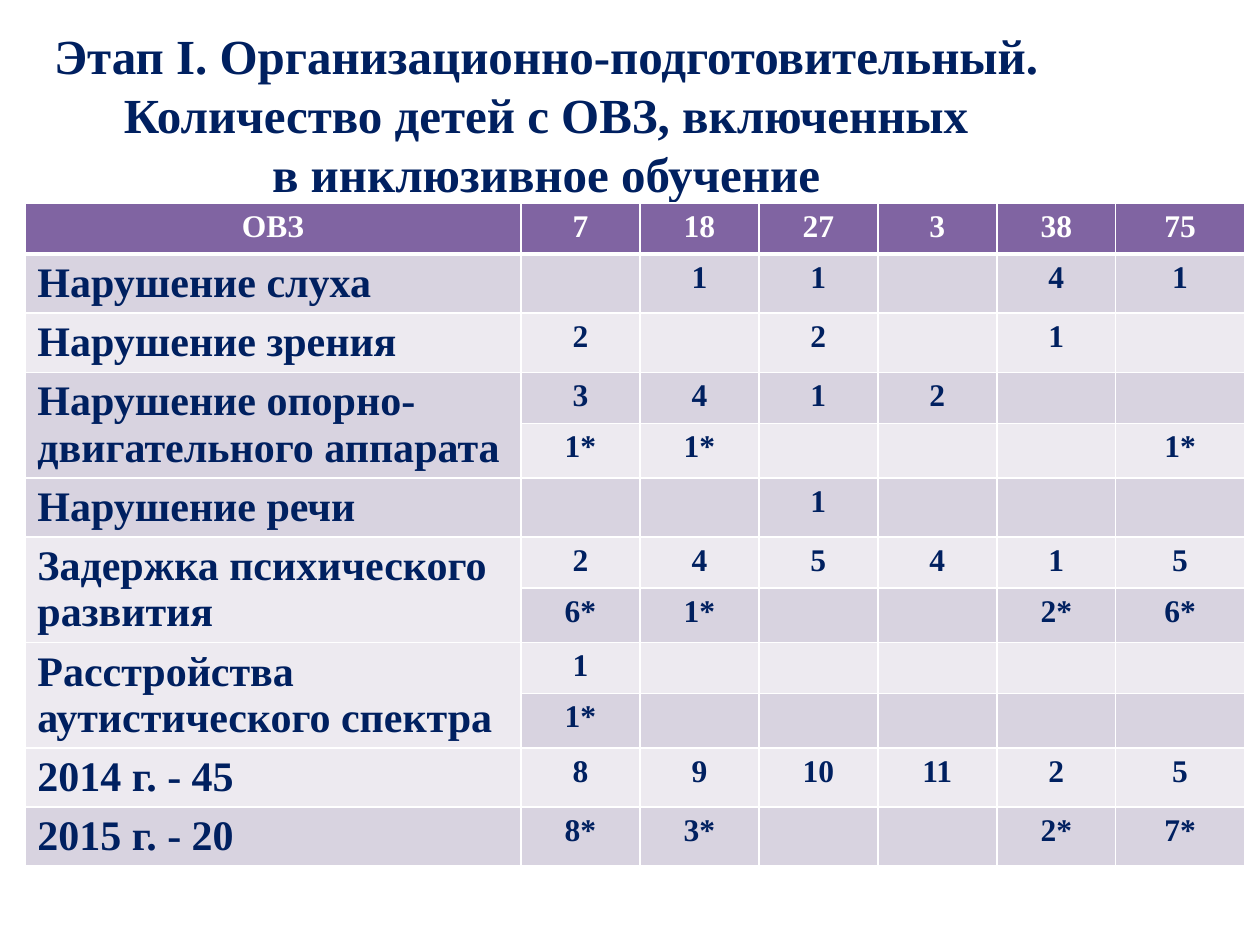
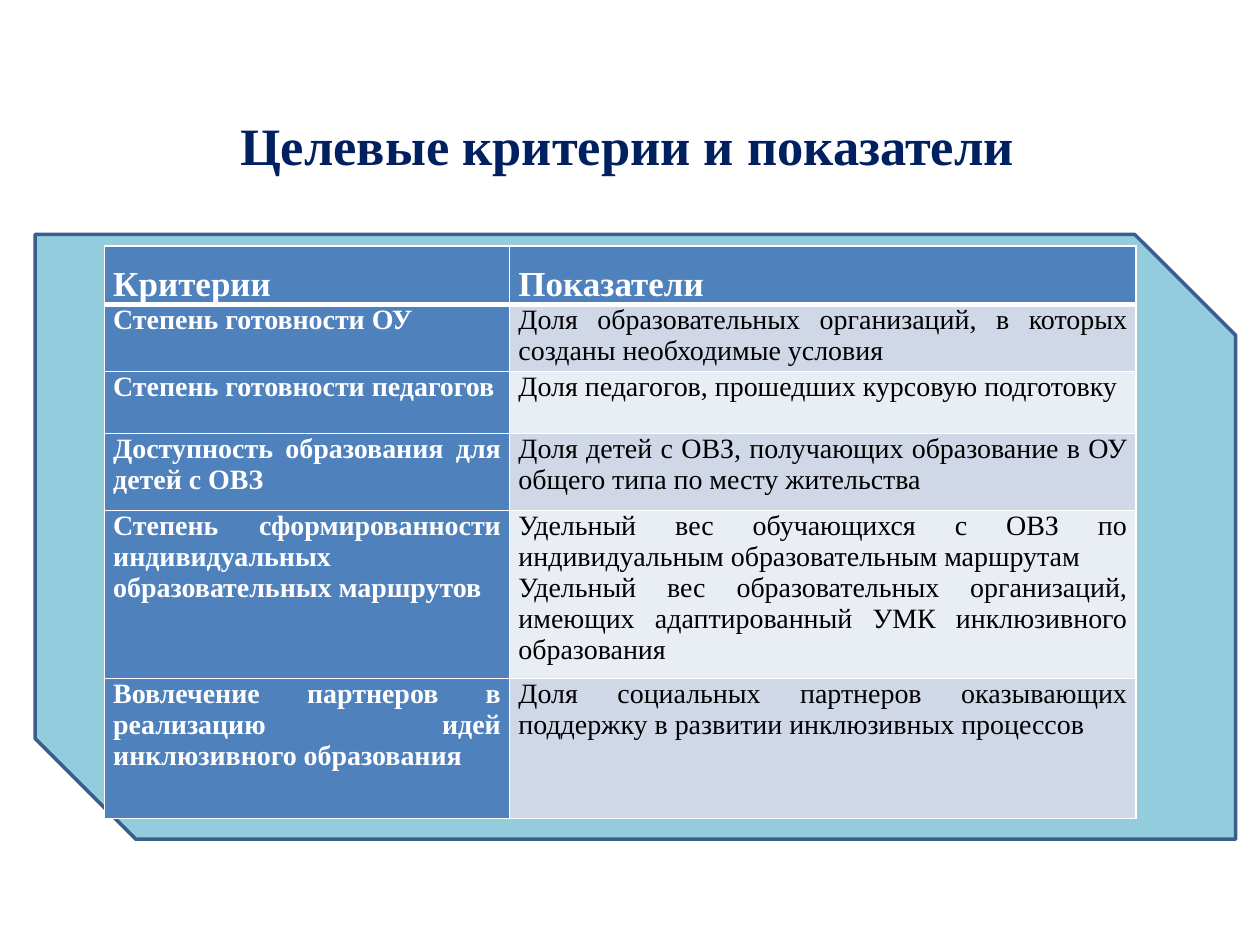
"""Build two slides on inclusive education: pupil counts, then target criteria."""
from dataclasses import dataclass

from lxml import etree
from pptx import Presentation
from pptx.dml.color import RGBColor
from pptx.enum.shapes import MSO_SHAPE
from pptx.enum.text import MSO_ANCHOR, MSO_AUTO_SIZE, PP_ALIGN
from pptx.oxml.ns import qn
from pptx.util import Pt

CENTER, JUSTIFY, LEFT = PP_ALIGN.CENTER, PP_ALIGN.JUSTIFY, PP_ALIGN.LEFT
MIDDLE = MSO_ANCHOR.MIDDLE
NO_AUTOFIT = MSO_AUTO_SIZE.NONE
SNIPPED = MSO_SHAPE.SNIP_2_DIAG_RECTANGLE

FONT = "Times New Roman"
NAVY, WHITE, BLACK = "002060", "FFFFFF", "000000"
PURPLE, PURPLE_BANDS = "8064A2", ("D8D3E0", "EDEAF0")
BLUE, BLUE_BANDS = "4F81BD", ("D0D8E8", "E9EDF4")
PANEL_FILL, PANEL_LINE = "93CDDD", "3A5F8C"
TITLE_ONLY = 5


@dataclass(frozen=True)
class Box:
    left: float
    top: float
    width: float
    height: float

    def points(self) -> tuple:
        return Pt(self.left), Pt(self.top), Pt(self.width), Pt(self.height)


@dataclass(frozen=True)
class CellStyle:
    size: float
    color: str
    fill: str
    bold: bool = True
    align: PP_ALIGN = CENTER
    spacing: float = 1.0
    margins: tuple = (7.2, 3.6)
    bottom_line: float = 1


COUNT_HEADER = ["ОВЗ", "7", "18", "27", "3", "38", "75"]
COUNTS = [
    ["Нарушение слуха", "", "1", "1", "", "4", "1"],
    ["Нарушение зрения", "2", "", "2", "", "1", ""],
    ["Нарушение опорно-двигательного аппарата", "3", "4", "1", "2", "", ""],
    ["", "1*", "1*", "", "", "", "1*"],
    ["Нарушение речи", "", "", "1", "", "", ""],
    ["Задержка психического развития", "2", "4", "5", "4", "1", "5"],
    ["", "6*", "1*", "", "", "2*", "6*"],
    ["Расстройства аутистического спектра", "1", "", "", "", "", ""],
    ["", "1*", "", "", "", "", ""],
    ["2014 г. - 45", "8", "9", "10", "11", "2", "5"],
    ["2015 г. - 20", "8*", "3*", "", "", "2*", "7*"],
]
CRITERIA_HEADER = ["Критерии", "Показатели"]
CRITERIA = [
    ["Степень готовности ОУ",
     "Доля образовательных организаций, в которых созданы необходимые условия"],
    ["Степень готовности педагогов",
     "Доля педагогов, прошедших курсовую подготовку"],
    ["Доступность образования для детей с ОВЗ",
     "Доля детей с ОВЗ, получающих образование в ОУ общего типа по месту жительства"],
    ["Степень сформированности индивидуальных образовательных маршрутов",
     "Удельный вес обучающихся с ОВЗ по индивидуальным образовательным маршрутам\n"
     "Удельный вес образовательных организаций, имеющих адаптированный УМК "
     "инклюзивного образования"],
    ["Вовлечение партнеров в реализацию идей инклюзивного образования",
     "Доля социальных партнеров оказывающих поддержку в развитии инклюзивных процессов"],
]


def rgb(color: str) -> RGBColor:
    return RGBColor.from_string(color)


def style_paragraph(p, size: float, color: str, bold: bool, align: PP_ALIGN) -> None:
    p.alignment = align
    p.font.name = FONT
    p.font.size = Pt(size)
    p.font.bold = bold
    p.font.color.rgb = rgb(color)


def add_titled_slide(prs, title: str, box: Box, size: float):
    s = prs.slides.add_slide(prs.slide_layouts[TITLE_ONLY])
    sp = s.shapes.title
    sp.left, sp.top, sp.width, sp.height = box.points()
    tf = sp.text_frame
    tf.text = title
    tf.auto_size = NO_AUTOFIT
    tf.vertical_anchor = MIDDLE
    style_paragraph(tf.paragraphs[0], size, NAVY, True, CENTER)
    return s


def draw_borders(cell, bottom_line: float) -> None:
    tc_pr = cell._tc.get_or_add_tcPr()
    for side, width in (("L", 1), ("R", 1), ("T", 1), ("B", bottom_line)):
        ln = etree.SubElement(tc_pr, qn(f"a:ln{side}"), w=str(Pt(width)))
        fill = etree.SubElement(ln, qn("a:solidFill"))
        etree.SubElement(fill, qn("a:srgbClr"), val=WHITE)


def fill_cell(cell, text: str, style: CellStyle) -> None:
    draw_borders(cell, style.bottom_line)
    cell.fill.solid()
    cell.fill.fore_color.rgb = rgb(style.fill)
    side, top = style.margins
    cell.margin_left = cell.margin_right = Pt(side)
    cell.margin_top = cell.margin_bottom = Pt(top)
    cell.text = text
    for p in cell.text_frame.paragraphs:
        style_paragraph(p, style.size, style.color, style.bold, style.align)
        p.line_spacing = style.spacing


def add_grid(s, left: float, top: float, widths: list, heights: list):
    box = Box(left, top, sum(widths), sum(heights))
    table = s.shapes.add_table(len(heights), len(widths), *box.points()).table
    table.horz_banding = False
    for column, width in zip(table.columns, widths):
        column.width = Pt(width)
    for row, height in zip(table.rows, heights):
        row.height = Pt(height)
    return table


def count_style(row: int, col: int) -> CellStyle:
    if row == 0:
        return CellStyle(18, WHITE, PURPLE, bottom_line=3)
    fill = PURPLE_BANDS[(row - 1) % 2]
    if col == 0:
        return CellStyle(24, NAVY, fill, align=LEFT)
    return CellStyle(18, NAVY, fill)


def criteria_style(row: int, col: int) -> CellStyle:
    margins = (5, 0)
    if row == 0:
        return CellStyle(20, WHITE, BLUE, align=JUSTIFY, spacing=1.5,
                         margins=margins, bottom_line=3)
    if col == 0:
        return CellStyle(16, WHITE, BLUE, align=JUSTIFY, margins=margins)
    return CellStyle(16, BLACK, BLUE_BANDS[(row - 1) % 2], bold=False,
                     align=JUSTIFY, margins=margins)


def fill_table(table, rows: list, style_for) -> None:
    for r, row in enumerate(rows):
        for c, text in enumerate(row):
            fill_cell(table.cell(r, c), text, style_for(r, c))


def build_counts(prs) -> None:
    title = ("Этап I. Организационно-подготовительный.\v"
             "Количество детей с ОВЗ, включенных\vв инклюзивное обучение")
    s = add_titled_slide(prs, title, Box(-48, 31.5, 720, 67.5), 28)
    rows = [COUNT_HEADER] + COUNTS
    table = add_grid(s, 14.2, 116, [283.5] + [68] * 5 + [73.5], [29.2] * len(rows))
    fill_table(table, rows, count_style)
    for r, row in enumerate(rows):
        if not row[0]:
            table.cell(r - 1, 0).merge(table.cell(r, 0))


def build_criteria(prs) -> None:
    s = add_titled_slide(prs, "Целевые критерии и показатели",
                         Box(-3, 31.5, 723, 102.5), 30)
    panel = s.shapes.add_shape(SNIPPED, *Box(20, 134, 686, 345.6).points())
    panel.shadow.inherit = False
    panel.fill.solid()
    panel.fill.fore_color.rgb = rgb(PANEL_FILL)
    panel.line.color.rgb = rgb(PANEL_LINE)
    panel.line.width = Pt(2)
    table = add_grid(s, 59.7, 140.6, [231.6, 358], [33, 38.4, 35.4, 44, 96, 80])
    fill_table(table, [CRITERIA_HEADER] + CRITERIA, criteria_style)


def main() -> None:
    prs = Presentation()
    prs.slide_width, prs.slide_height = Pt(720), Pt(540)
    build_counts(prs)
    build_criteria(prs)
    prs.save("out.pptx")


if __name__ == "__main__":
    main()
